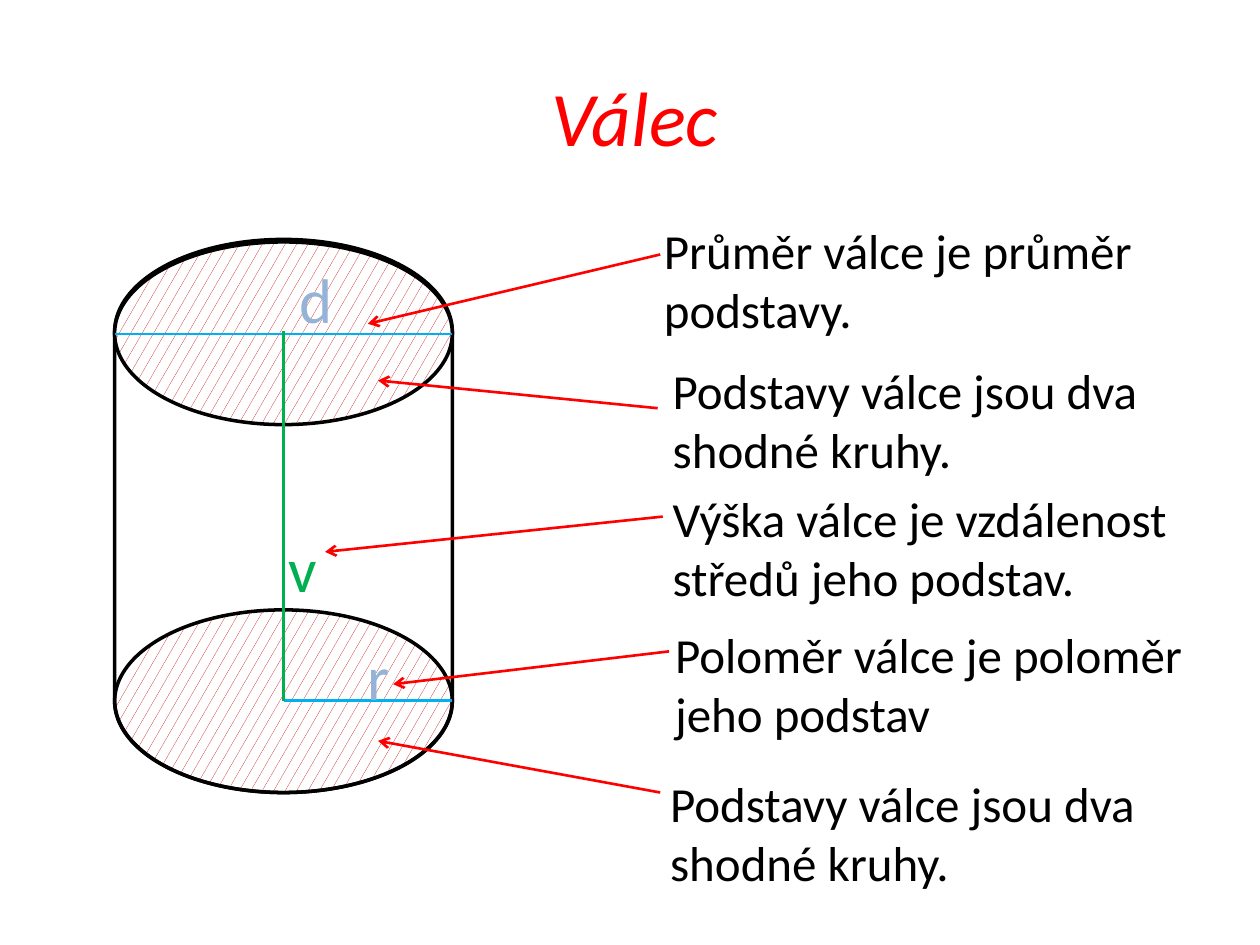
from lxml.etree import SubElement
from pptx import Presentation
from pptx.dml.color import RGBColor
from pptx.enum.dml import MSO_PATTERN as PATTERN
from pptx.enum.shapes import MSO_CONNECTOR as CONN, MSO_SHAPE as SHAPE
from pptx.enum.text import MSO_ANCHOR as ANCHOR, PP_ALIGN as ALIGN
from pptx.oxml.ns import qn
from pptx.util import Pt

PX = 9144
BLACK, RED, BLUE, GREEN, PALE = "000000", "FF0000", "00B0F0", "00B050", "95B3D7"

NOTES = [
    ((0, 0, 448, 104), "Průměr válce je průměr podstavy.", (7, 32), (-225, 87)),
    ((7, 111, 441, 104), "Podstavy válce jsou dva shodné kruhy.", (5, 154), (-217, 132)),
    ((7, 213, 415, 104), "Výška válce je vzdálenost středů jeho podstav.", (9, 240), (-259, 268)),
    ((9, 321, 431, 104), "Poloměr válce je poloměr jeho podstav", (14, 347), (-205, 373)),
    ((5, 439, 425, 104), "Podstavy válce jsou dva shodné kruhy.", (7, 459), (-217, 418)),
]


def emu(*lengths):
    """Turn px lengths into EMU."""
    return [n * PX for n in lengths]


def rgb(color):
    """Turn a hex string into a colour."""
    return RGBColor.from_string(color)


def add_text(s, box, text, size, color, anchor=ANCHOR.TOP):
    """Place a one-paragraph text box and return its paragraph."""
    tf = s.shapes.add_textbox(*emu(*box)).text_frame
    tf.word_wrap = True
    tf.vertical_anchor = anchor
    p = tf.paragraphs[0]
    p.text = text
    p.font.name = "Calibri"
    p.font.size = Pt(size)
    p.font.color.rgb = rgb(color)
    return p


def add_line(s, start, end, color, width, arrow=False):
    """Draw a straight line, with an open arrowhead at its end if asked."""
    c = s.shapes.add_connector(CONN.STRAIGHT, *emu(*start, *end))
    c.line.color.rgb = rgb(color)
    c.line.width = Pt(width)
    if arrow:
        SubElement(c.line._get_or_add_ln(), qn("a:tailEnd"), type="arrow")
    SubElement(c._element.spPr, qn("a:effectLst"))


def add_outline(s, kind, box, hatched):
    """Draw a black outlined shape, hatched or unfilled."""
    sp = s.shapes.add_shape(kind, *emu(*box))
    sp.shadow.inherit = False
    sp.line.color.rgb = rgb(BLACK)
    sp.line.width = Pt(2)
    if hatched:
        sp.fill.patterned()
        sp.fill.pattern = PATTERN.SMALL_CONFETTI
        sp.fill.fore_color.rgb = rgb("C00000")
        sp.fill.back_color.rgb = rgb("FFFFFF")
    else:
        sp.fill.background()


def add_title(s, box):
    """Place the centred slide title."""
    p = add_text(s, box, "Válec", 44, RED, ANCHOR.MIDDLE)
    p.alignment = ALIGN.CENTER
    p.font.italic = True


def add_cylinder(s, x, y, w, h):
    """Draw the cylinder with its bases, diameter, radius and height."""
    base = 145
    top, bottom, axis = y + 75, y + h - 73, x + w // 2
    add_outline(s, SHAPE.OVAL, (x, y + h - base, w, base), True)
    add_outline(s, SHAPE.FLOWCHART_MAGNETIC_DISK, (x, y, w, h), False)
    add_outline(s, SHAPE.OVAL, (x, y + 2, w, base), True)
    add_line(s, (x, top), (x + w, top), BLUE, 1.5)
    add_line(s, (axis, bottom), (x + w, bottom), BLUE, 1.5)
    add_line(s, (axis, top - 2), (axis, bottom), GREEN, 2.25)
    for dx, dy, letter, color in ((191, 311, "r", PALE), (137, 12, "d", PALE), (128, 225, "v", GREEN)):
        add_text(s, (x + dx, y + dy, 60, 71), letter, 36, color)


def add_notes(s, x, y):
    """Place the explanations and their arrows into the drawing."""
    for (dx, dy, w, h), text, (x1, y1), (x2, y2) in NOTES:
        add_text(s, (x + dx, y + dy, w, h), text, 28, BLACK)
        add_line(s, (x + x1, y + y1), (x + x2, y + y2), RED, 1.5, arrow=True)


def main():
    """Build and save the slide."""
    prs = Presentation()
    prs.slide_width, prs.slide_height = emu(1000, 750)
    s = prs.slides.add_slide(prs.slide_layouts[6])
    add_title(s, (54, 29, 900, 125))
    add_cylinder(s, 91, 190, 268, 439)
    add_notes(s, 517, 170)
    prs.save("out.pptx")


if __name__ == "__main__":
    main()
